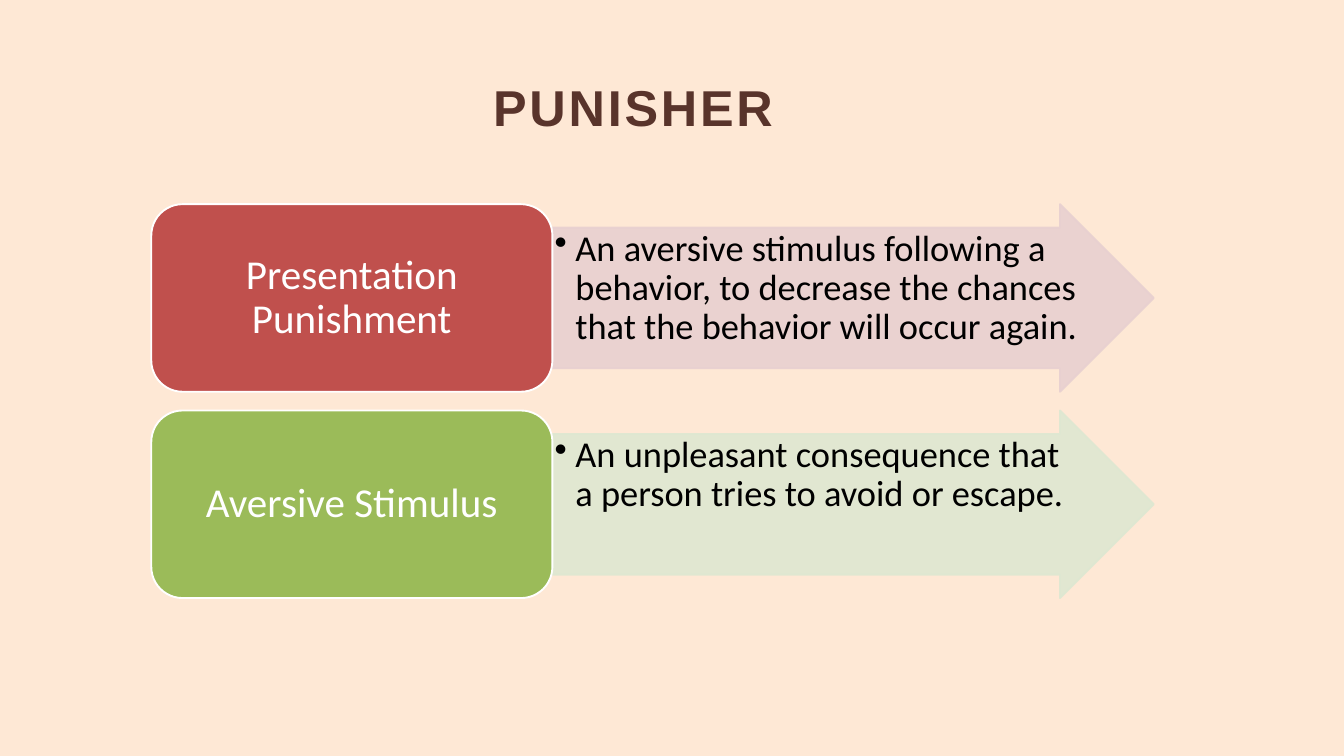
from lxml.etree import Element as Node, SubElement as Sub
from pptx import Presentation as Deck
from pptx.dml.color import RGBColor as RGB
from pptx.enum.shapes import MSO_SHAPE as Kind
from pptx.enum.text import MSO_ANCHOR as Anchor, PP_ALIGN as Align
from pptx.oxml.ns import qn
from pptx.util import Cm, Pt

HUES = {
    "back": "FEE8D5", "title": "59342B", "white": "FFFFFF", "black": "000000",
    "red": "C0504D", "pink": "E8D0D0", "green": "9BBB59", "mint": "DEE7D1",
}
ROWS = [
    ("Presentation Punishment", "red", "pink",
     "An aversive stimulus following a behavior, to decrease the chances "
     "that the behavior will occur again."),
    ("Aversive Stimulus", "green", "mint",
     "An unpleasant consequence that a person tries to avoid or escape."),
]
TOP, STEP, HIGH = 7.72, 7.8, 7.09
LEFT, WIDE, REACH = 5.72, 15.16, 22.73


class Page:
    def __init__(self, slide):
        self.slide = slide
        fill = slide.background.fill
        fill.solid()
        fill.fore_color.rgb = self.hue("back")

    def hue(self, name):
        return RGB.from_string(HUES[name])

    def text(self, shape, words, font, size, hue, align, anchor, pad):
        frame = shape.text_frame
        frame.word_wrap = True
        frame.vertical_anchor = anchor
        frame.margin_left = frame.margin_right = Cm(pad[0])
        frame.margin_top = frame.margin_bottom = Cm(pad[1])
        para = frame.paragraphs[0]
        para.text = words
        para.alignment = align
        para.font.name = font
        para.font.size = Pt(size)
        para.font.color.rgb = self.hue(hue)
        return para

    def shape(self, kind, box, fill, line):
        shape = self.slide.shapes.add_shape(kind, *map(Cm, box))
        shape.shadow.inherit = False
        shape.fill.solid()
        shape.fill.fore_color.rgb = self.hue(fill)
        shape.line.color.rgb = self.hue(line)
        shape.line.width = Pt(2)
        return shape

    def title(self, words, box):
        shape = self.slide.shapes.add_textbox(*map(Cm, box))
        para = self.text(shape, words, "Arial", 54, "title",
                         Align.LEFT, Anchor.TOP, (0, 0))
        para.font.bold = True
        para.runs[0].font._element.set("spc", "300")

    def label(self, words, box, fill):
        shape = self.shape(Kind.ROUNDED_RECTANGLE, box, fill, "white")
        para = self.text(shape, words, "Calibri", 44, "white",
                         Align.CENTER, Anchor.MIDDLE, (0.46, 0.23))
        para.line_spacing = 0.9

    def arrow(self, words, box, fill):
        shape = self.shape(Kind.RIGHT_ARROW, box, fill, fill)
        shape.adjustments[0] = 0.75
        for tint in shape._element.spPr.iter(qn("a:srgbClr")):
            Sub(tint, qn("a:alpha"), val="90000")
        para = self.text(shape, words, "Calibri", 39, "black",
                         Align.LEFT, Anchor.TOP, (0.08, 0.08))
        para.line_spacing = 0.9
        props = para._p.get_or_add_pPr()
        props.set("marL", str(Cm(0.79)))
        props.set("indent", str(-Cm(0.79)))
        props.find(qn("a:defRPr")).addprevious(Node(qn("a:buChar"), char="•"))


def main():
    deck = Deck()
    deck.slide_width, deck.slide_height = Cm(50.8), Cm(28.58)
    page = Page(deck.slides.add_slide(deck.slide_layouts[6]))
    page.title("PUNISHER", (18.64, 2.87, 16.48, 2.34))
    for i, (name, dark, light, words) in enumerate(ROWS):
        top = TOP + i * STEP
        page.arrow(words, (LEFT + WIDE, top, REACH, HIGH), light)
        page.label(name, (LEFT, top, WIDE, HIGH), dark)
    deck.save("out.pptx")


if __name__ == "__main__":
    main()
